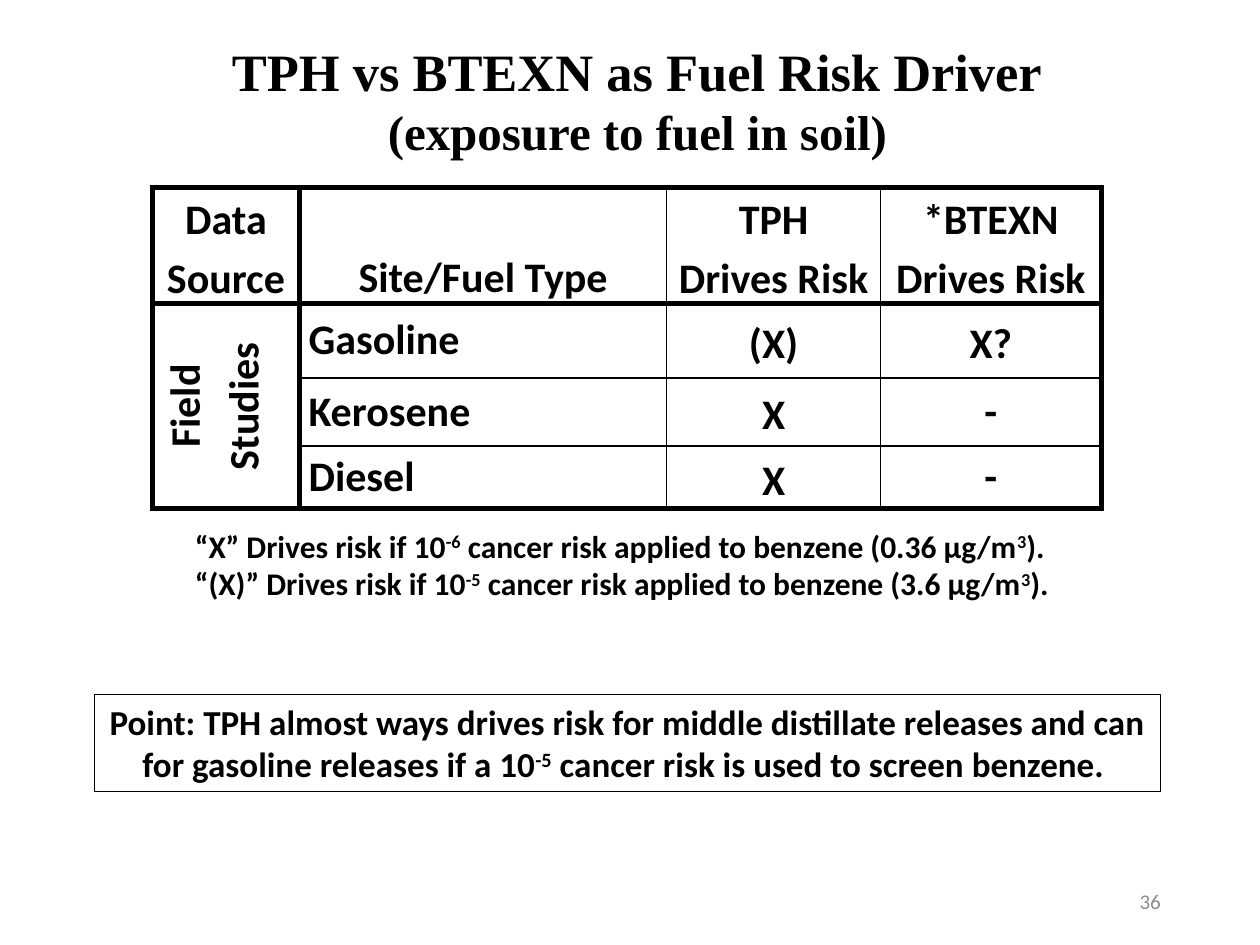
from lxml import etree
from pptx import Presentation
from pptx.dml.color import RGBColor
from pptx.enum import shapes, text
from pptx.oxml import ns
from pptx.util import Cm, Pt

INK = {"black": "000000", "grey": "8C8C8C"}
LEFT, MID, RIGHT = text.PP_ALIGN.LEFT, text.PP_ALIGN.CENTER, text.PP_ALIGN.RIGHT

COLS = [2.97, 7.4, 4.31, 4.45]
ROWS = [2.03, 1.5, 1.37, 1.27]
HEAD = ["Data\nSource", "Site/Fuel Type", "TPH\nDrives Risk", "*BTEXN\nDrives Risk"]
BODY = [
    ["Field\nStudies", "Gasoline", "(X)", "X?"],
    ["", "Kerosene", "X", "-"],
    ["", "Diesel", "X", "-"],
]
NOTES = [
    "“X” Drives risk if 10^-6^ cancer risk applied to benzene (0.36 µg/m^3^).",
    "“(X)” Drives risk if 10^-5^ cancer risk applied to benzene (3.6 µg/m^3^).",
]
POINT = ("Point: TPH almost ways drives risk for middle distillate releases and can "
         "for gasoline releases if a 10^-5^ cancer risk is used to screen benzene. ")


def write(frame, lines, sizes, align=LEFT, face="Calibri", ink="black", bold=True):
    """Fill a frame line by line; text between carets is superscript."""
    for i, line in enumerate(lines):
        para = frame.paragraphs[0] if i == 0 else frame.add_paragraph()
        para.alignment = align
        for j, part in enumerate(line.split("^")):
            run = para.add_run()
            run.text = part
            font = run.font
            font.name, font.size, font.bold = face, Pt(sizes[i]), bold
            font.color.rgb = RGBColor.from_string(INK[ink])
            if j % 2:
                run._r.get_or_add_rPr().set("baseline", "30000")


def add_text(slide, box, lines, sizes, wrap=True, anchor=text.MSO_ANCHOR.TOP, **style):
    frame = slide.shapes.add_textbox(*map(Cm, box)).text_frame
    frame.word_wrap = wrap
    frame.vertical_anchor = anchor
    write(frame, lines, sizes, **style)


def add_frame(slide, box, lines, sizes):
    rect = slide.shapes.add_shape(shapes.MSO_SHAPE.RECTANGLE, *map(Cm, box))
    rect.shadow.inherit = False
    rect.fill.background()
    rect.line.color.rgb = RGBColor.from_string(INK["black"])
    rect.line.width = Pt(0.75)
    rect.text_frame.word_wrap = True
    rect.text_frame.vertical_anchor = text.MSO_ANCHOR.TOP
    write(rect.text_frame, lines, sizes, align=MID)


def set_edges(cell, row, col):
    """Thick outer frame, header row and first column; thin elsewhere."""
    last = len(ROWS) - 1
    thick = {
        "L": col <= 1,
        "R": col in (0, len(COLS) - 1),
        "T": row <= 1,
        "B": row in (0, last) or col == 0,
    }
    props = cell._tc.get_or_add_tcPr()
    for side, heavy in thick.items():
        line = etree.SubElement(props, ns.qn(f"a:ln{side}"), w=str(Pt(3 if heavy else 1)))
        fill = etree.SubElement(line, ns.qn("a:solidFill"))
        etree.SubElement(fill, ns.qn("a:srgbClr"), val=INK["black"])


def fill_cell(cell, row, col, words):
    set_edges(cell, row, col)
    cell.fill.background()
    cell.margin_left = cell.margin_right = Cm(0.18)
    cell.margin_top = cell.margin_bottom = 0
    cell.vertical_anchor = text.MSO_ANCHOR.MIDDLE if row else text.MSO_ANCHOR.BOTTOM
    if not words:
        return
    name = row > 0 and col == 1
    lines = words.split("\n")
    write(cell.text_frame, lines, [24] * len(lines), align=LEFT if name else MID)
    for para in cell.text_frame.paragraphs:
        if name:
            para.space_before = para.space_after = Pt(6)
        elif words != "-":
            para.line_spacing = 1.15


def add_grid(slide, left, top):
    grid = slide.shapes.add_table(len(ROWS), len(COLS), Cm(left), Cm(top),
                                  Cm(sum(COLS)), Cm(sum(ROWS))).table
    for col, width in zip(grid.columns, COLS):
        col.width = Cm(width)
    for row, height in zip(grid.rows, ROWS):
        row.height = Cm(height)
    for r, row in enumerate([HEAD] + BODY):
        for c, words in enumerate(row):
            fill_cell(grid.cell(r, c), r, c, words)
    # Turned label beside the fuel rows
    label = grid.cell(1, 0)
    label.merge(grid.cell(len(ROWS) - 1, 0))
    label._tc.get_or_add_tcPr().set("vert", "vert270")


def main():
    deck = Presentation()
    deck.slide_width, deck.slide_height = Cm(25.4), Cm(19.05)
    slide = deck.slides.add_slide(deck.slide_layouts[6])

    # Title
    add_text(slide, (2.03, 0.66, 21.64, 2.74),
             ["TPH vs BTEXN as Fuel Risk Driver", "(exposure to fuel in soil)"],
             [30, 28], align=MID, face="Times New Roman")
    # Risk table and its key
    add_grid(slide, 3.07, 3.78)
    add_text(slide, (3.68, 10.49, 17.93, 1.8), NOTES, [18, 18], wrap=False)
    # Main point
    add_frame(slide, (1.9, 14, 21.49, 1.96), [POINT], [20])
    # Page number
    add_text(slide, (17.93, 17.65, 5.72, 1.02), ["36"], [12],
             anchor=text.MSO_ANCHOR.MIDDLE, align=RIGHT, ink="grey", bold=False)

    deck.save("out.pptx")


if __name__ == "__main__":
    main()
